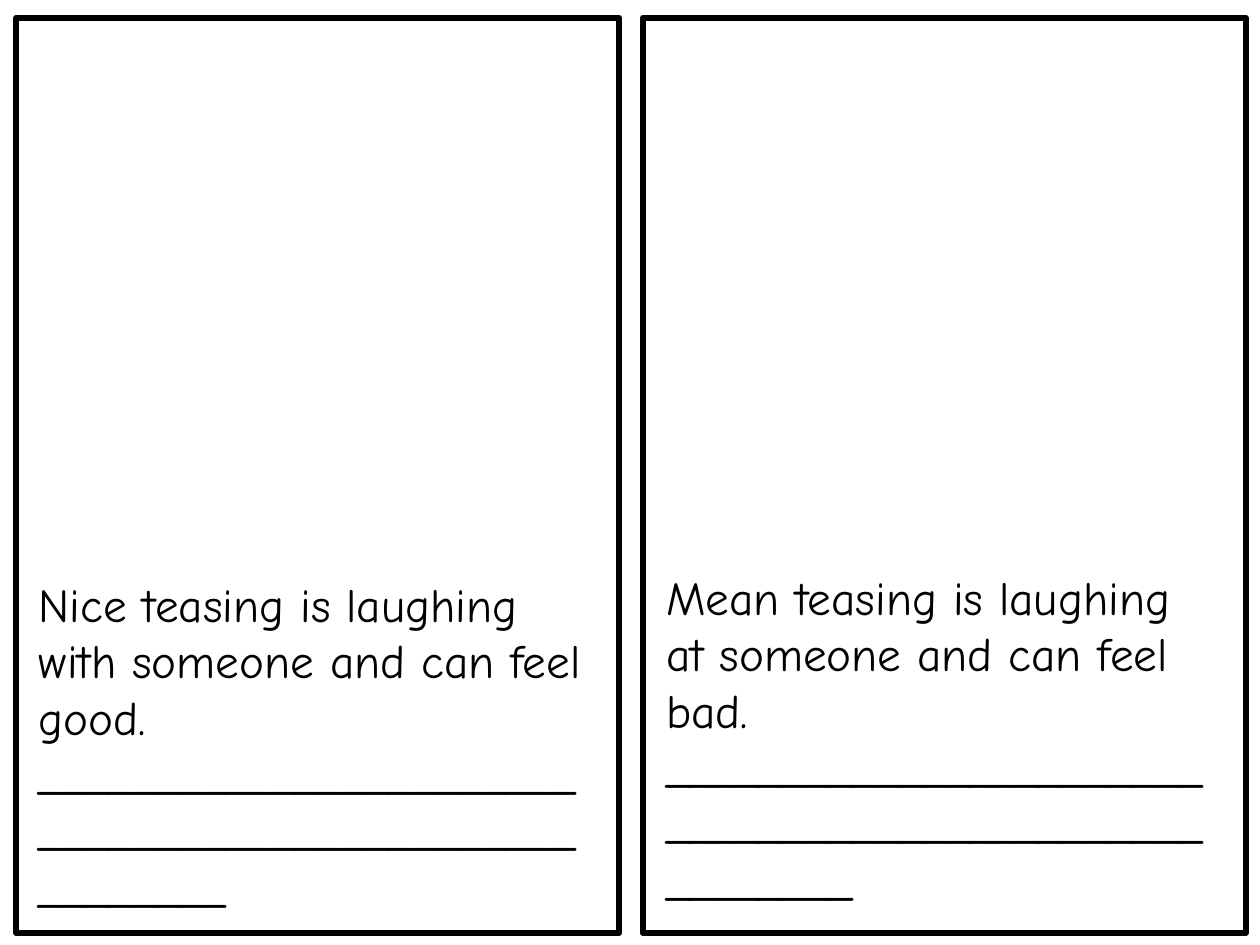
from pptx import Presentation
from pptx.dml.color import RGBColor
from pptx.enum.shapes import MSO_SHAPE
from pptx.enum.text import MSO_ANCHOR, PP_ALIGN
from pptx.util import Inches, Pt

RECTANGLE = MSO_SHAPE.RECTANGLE
TOP = MSO_ANCHOR.TOP
LEFT = PP_ALIGN.LEFT

COLORS = {"paper": "FFFFFF", "ink": "000000"}
FONT = "Comic Neue"
PAGE_WIDTH, PAGE_HEIGHT = 17.78, 13.33
PANEL_LEFT, PANEL_TOP = 0.23, 0.25
PANEL_WIDTH, PANEL_HEIGHT = 8.51, 12.91
PANEL_STEP = 8.84
WRITING_LINE = "_" * 54

# Each caption: sentence, then its left, top, width and height inside the panel
CAPTIONS = [
    ("Nice teasing is laughing with someone and can feel good.",
     (0.22, 7.81, 8.08, 4.95)),
    ("Mean teasing is laughing at someone and can feel bad.",
     (0.23, 7.71, 8.06, 5.09)),
]


def add_rectangle(page, box, line_color):
    rectangle = page.shapes.add_shape(RECTANGLE, *(Inches(n) for n in box))
    rectangle.shadow.inherit = False
    rectangle.fill.solid()
    rectangle.fill.fore_color.rgb = RGBColor.from_string(COLORS["paper"])
    rectangle.line.color.rgb = RGBColor.from_string(COLORS[line_color])
    rectangle.line.width = Pt(6)
    return rectangle


def add_caption(page, box, sentence):
    """Add the sentence with blank lines to write on below it."""
    frame = add_rectangle(page, box, "paper").text_frame
    frame.word_wrap = True
    frame.vertical_anchor = TOP
    frame.text = f"{sentence}\n{WRITING_LINE}"
    for para in frame.paragraphs:
        para.alignment = LEFT
        for span in para.runs:
            span.font.name = FONT
            span.font.size = Pt(48)
            span.font.color.rgb = RGBColor.from_string(COLORS["ink"])


def add_story_panel(page, box, sentence, caption_box):
    add_rectangle(page, box, "ink")
    left, top, width, height = caption_box
    add_caption(page, (box[0] + left, box[1] + top, width, height), sentence)


def main():
    deck = Presentation()
    deck.slide_width, deck.slide_height = Inches(PAGE_WIDTH), Inches(PAGE_HEIGHT)
    page = deck.slides.add_slide(deck.slide_layouts[6])
    for column, (sentence, caption_box) in enumerate(CAPTIONS):
        panel = (PANEL_LEFT + column * PANEL_STEP, PANEL_TOP,
                 PANEL_WIDTH, PANEL_HEIGHT)
        add_story_panel(page, panel, sentence, caption_box)
    deck.save("out.pptx")


if __name__ == "__main__":
    main()
